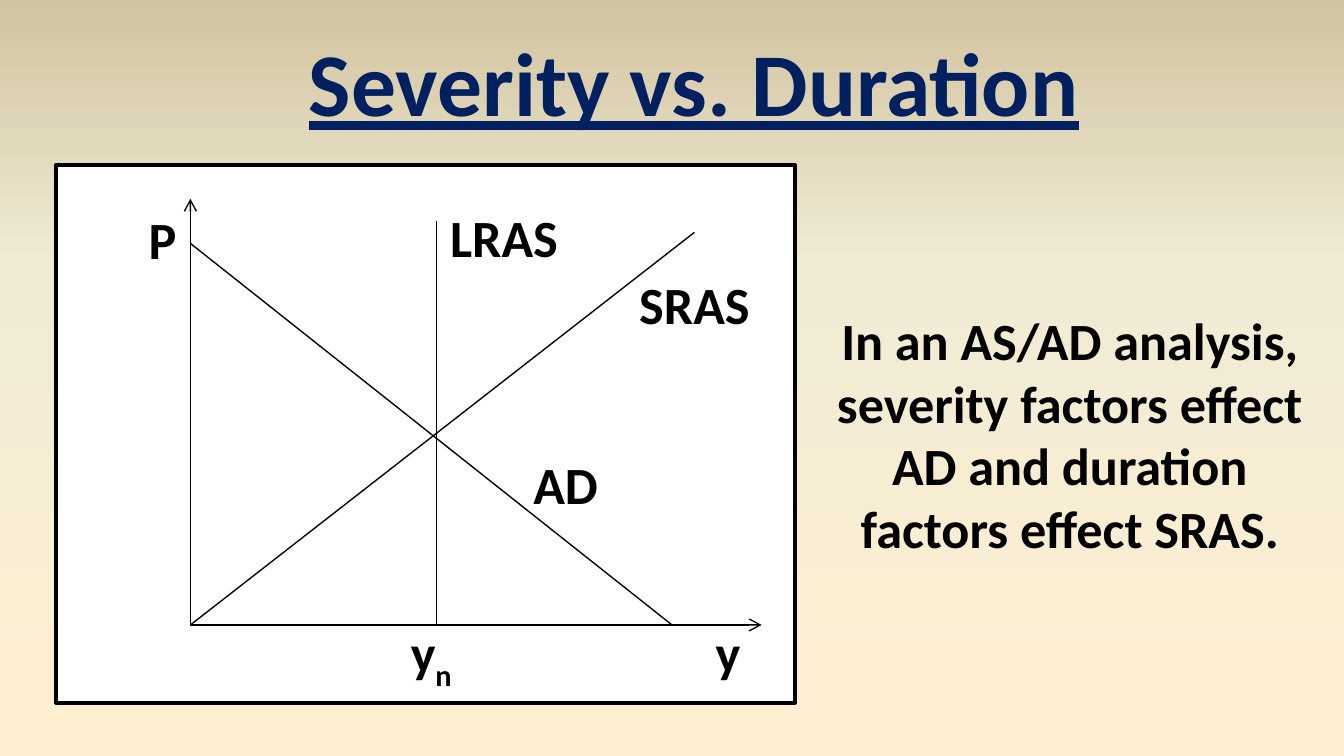
from copy import deepcopy

from pptx import Presentation
from pptx.dml.color import RGBColor
from pptx.enum.shapes import MSO_CONNECTOR as CONN, MSO_SHAPE as SHAPE
from pptx.enum.text import MSO_ANCHOR as ANCHOR, MSO_AUTO_SIZE as AUTO, PP_ALIGN as ALIGN
from pptx.oxml.ns import qn
from pptx.oxml.xmlchemy import OxmlElement
from pptx.util import Pt

FONT = "Calibri"
BLACK, WHITE, NAVY = "000000", "FFFFFF", "002060"
BACKGROUND = [(0, "FFEFD1"), (0.65, "F0EBD5"), (1, "D1C39F")]

# Graph geometry
ORIGIN_X, ORIGIN_Y = 102, 334.8
NATURAL_X = 234
LABEL_H = 41.2


def rgb(color):
    return RGBColor.from_string(color)


def place(sp, x, y, w, h):
    sp.left, sp.top, sp.width, sp.height = Pt(x), Pt(y), Pt(w), Pt(h)


def set_background(slide):
    fill = slide.background.fill
    fill.gradient()
    fill.gradient_angle = 90
    stops = next(slide.element.iter(qn("a:gsLst")))
    stops.append(deepcopy(stops[-1]))
    for stop, (position, color) in zip(fill.gradient_stops, BACKGROUND):
        stop.position = position
        stop.color.rgb = rgb(color)


def add_run(p, text, size=28, color=BLACK):
    r = p.add_run()
    r.text = text
    r.font.name, r.font.size, r.font.bold = FONT, Pt(size), True
    r.font.color.rgb = rgb(color)
    return r


def add_text(shapes, text, x, y, w, h=LABEL_H):
    sp = shapes.add_textbox(Pt(x), Pt(y), Pt(w), Pt(h))
    tf = sp.text_frame
    tf.word_wrap = True
    tf.auto_size = AUTO.SHAPE_TO_FIT_TEXT
    p = tf.paragraphs[0]
    p.alignment = ALIGN.CENTER
    add_run(p, text)
    return p


def add_title(slide, text):
    sp = slide.shapes.title
    place(sp, 156, 10.8, 431.5, 65.4)
    tf = sp.text_frame
    tf.word_wrap = False
    tf.auto_size = AUTO.SHAPE_TO_FIT_TEXT
    tf.vertical_anchor = ANCHOR.TOP
    p = tf.paragraphs[0]
    p.alignment = ALIGN.CENTER
    add_run(p, text, 48, NAVY).font.underline = True


def add_panel(shapes, x, y, w, h):
    sp = shapes.add_shape(SHAPE.RECTANGLE, Pt(x), Pt(y), Pt(w), Pt(h))
    sp.shadow.inherit = False
    sp.fill.solid()
    sp.fill.fore_color.rgb = rgb(WHITE)
    sp.line.color.rgb = rgb(BLACK)
    sp.line.width = Pt(2)


def add_line(shapes, x1, y1, x2, y2, arrow=False):
    sp = shapes.add_connector(CONN.STRAIGHT, Pt(x1), Pt(y1), Pt(x2), Pt(y2))
    sp.line.color.rgb = rgb(BLACK)
    sp.line.width = Pt(0.75)
    if arrow:
        tail = OxmlElement("a:tailEnd")
        tail.set("type", "arrow")
        sp.line.color  # the line element exists once its colour is set
        sp.element.spPr.find(qn("a:ln")).append(tail)
    sp.element.spPr.append(OxmlElement("a:effectLst"))


def add_graph(slide):
    shapes = slide.shapes.add_group_shape().shapes
    add_panel(shapes, 30, 88.5, 396, 288)

    # Axes
    add_line(shapes, ORIGIN_X, ORIGIN_Y, ORIGIN_X, 106.5, arrow=True)
    add_line(shapes, ORIGIN_X, ORIGIN_Y, 408, ORIGIN_Y, arrow=True)

    # Curves: AD, SRAS, LRAS
    add_line(shapes, ORIGIN_X, 130.4, 360, ORIGIN_Y)
    add_line(shapes, 372, 124.5, ORIGIN_X, ORIGIN_Y)
    add_line(shapes, NATURAL_X, 118.5, NATURAL_X, ORIGIN_Y)

    # Labels
    for text, x, y, w in [
        ("SRAS", 330, 142.5, 84),
        ("P", 60, 107.5, 54),
        ("y", 366, 329, 48),
        ("AD", 276, 239, 54),
        ("LRAS", 228, 106.5, 84),
    ]:
        add_text(shapes, text, x, y, w)
    p = add_text(shapes, "y", 204, 329, 54)
    add_run(p, "n").font._element.set("baseline", "-25000")


def main():
    prs = Presentation()
    prs.slide_width, prs.slide_height = Pt(720), Pt(405)
    slide = prs.slides.add_slide(prs.slide_layouts[5])
    set_background(slide)
    add_title(slide, "Severity vs. Duration")
    add_text(
        slide.shapes,
        "In an AS/AD analysis, severity factors effect AD and duration factors effect SRAS.",
        438, 161.5, 270, 143,
    )
    add_graph(slide)
    prs.save("out.pptx")


if __name__ == "__main__":
    main()
